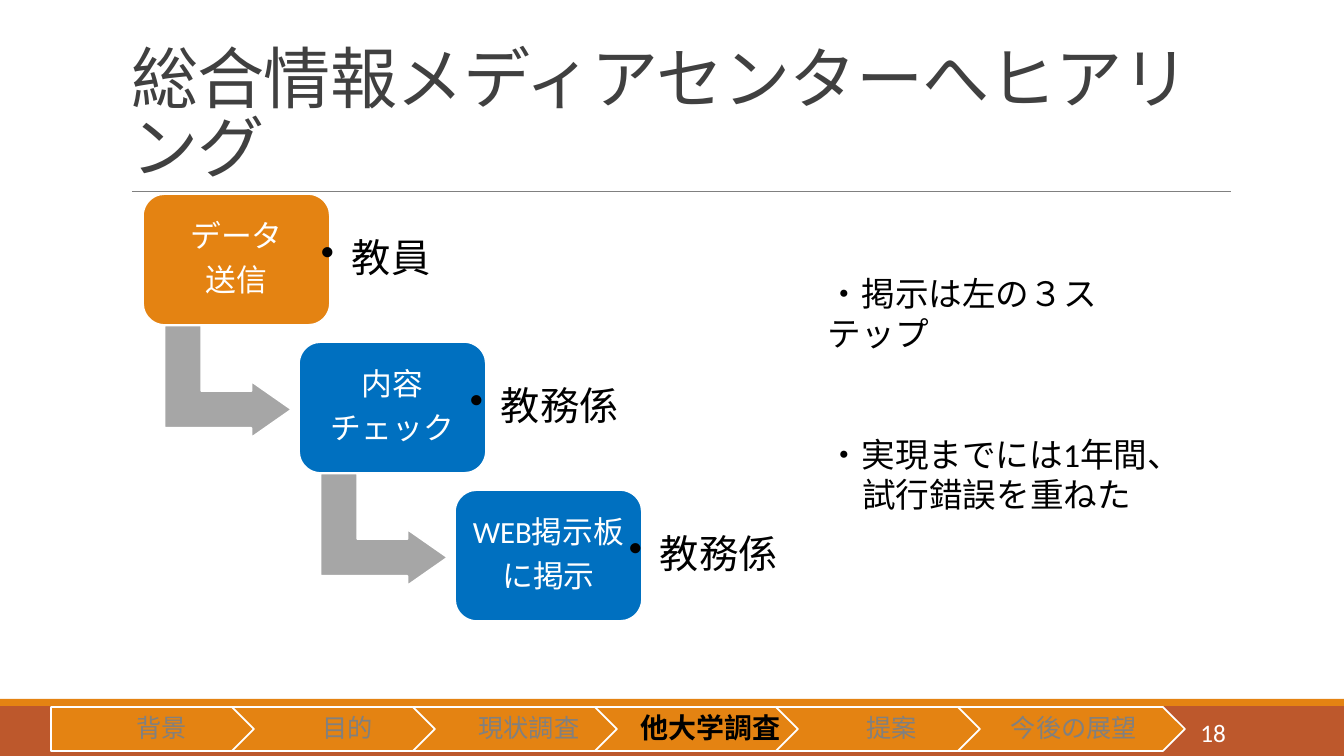
"""Build the slide on the hearing at the media centre."""
from lxml import etree
from pptx import Presentation
from pptx import util as u
from pptx.dml.color import RGBColor
from pptx.enum import shapes, text
from pptx.oxml.ns import qn

PX = 9071
THEME = {
    "font": "Calibri",
    "orange": "E48312", "rust": "BD582C", "blue": "0070C0", "arrow": "A6A6A6",
    "white": "FFFFFF", "black": "000000", "heading": "404040", "muted": "808080",
    "title": 48, "caption": 28, "body": 24, "step": 22, "active": 20, "nav": 18,
}
KIND = shapes.MSO_SHAPE
ALIGN = text.PP_ALIGN
MIDDLE = text.MSO_ANCHOR.MIDDLE

deck = Presentation()
deck.slide_width, deck.slide_height = 1344 * PX, 756 * PX
page = deck.slides.add_slide(deck.slide_layouts[1])


def draw(kind, geometry, fill, outlined=True):
    """Add a filled preset shape, with a white outline if asked."""
    shape = page.shapes.add_shape(kind, *[PX * value for value in geometry])
    shape.shadow.inherit = False
    shape.fill.solid()
    shape.fill.fore_color.rgb = RGBColor.from_string(THEME[fill])
    if outlined:
        shape.line.color.rgb = RGBColor.from_string(THEME["white"])
        shape.line.width = u.Pt(1.25)
    else:
        shape.line.fill.background()
    return shape


def write(frame, lines, size, color, margins, frame_format, para_format, bold=False):
    """Fill a text frame with one paragraph per line."""
    sides = ("margin_left", "margin_top", "margin_right", "margin_bottom")
    frame_format = {"word_wrap": True, "auto_size": text.MSO_AUTO_SIZE.NONE,
                    **dict(zip(sides, [PX * value for value in margins])), **frame_format}
    for name, value in frame_format.items():
        setattr(frame, name, value)
    for index, line in enumerate(lines):
        para = frame.add_paragraph() if index else frame.paragraphs[0]
        for name, value in para_format.items():
            setattr(para, name, value)
        span = para.add_run()
        span.text = line
        font_format = {"name": THEME["font"], "size": u.Pt(THEME[size]), "bold": bold}
        for name, value in font_format.items():
            setattr(span.font, name, value)
        span.font.color.rgb = RGBColor.from_string(THEME[color])


draw(KIND.RECTANGLE, (0, 706, 1344, 50), "rust", False)
draw(KIND.RECTANGLE, (0, 699, 1344, 7), "orange", False)

rule = page.shapes.add_connector(
    shapes.MSO_CONNECTOR.STRAIGHT, 132 * PX, 191 * PX, 1231 * PX, 191 * PX)
rule.line.color.rgb = RGBColor.from_string(THEME["muted"])
rule.line.width = u.Pt(0.5)
etree.SubElement(rule._element.spPr, qn("a:effectLst"))

title, body = page.placeholders
for box, geometry in ((title, (121, 31, 1109, 160)), (body, (818, 268, 346, 214))):
    for name, value in zip(("left", "top", "width", "height"), geometry):
        setattr(box, name, PX * value)

write(title.text_frame, ["総合情報メディアセンターへヒアリング"], "title", "heading",
      (10, 5, 10, 5), {"vertical_anchor": text.MSO_ANCHOR.BOTTOM},
      {"alignment": ALIGN.LEFT, "line_spacing": 0.85})
title.text_frame.paragraphs[0].runs[0]._r.get_or_add_rPr().set("spc", "-50")

number = page.shapes.add_textbox(*[PX * value for value in (1092, 712, 144, 40)])
write(number.text_frame, ["18"], "nav", "white", (10, 5, 10, 5),
      {"vertical_anchor": MIDDLE}, {"alignment": ALIGN.RIGHT})

centred = {"alignment": ALIGN.CENTER, "line_spacing": 0.9}
sections = ["背景", "目的", "現状調査", "他大学調査", "提案", "今後の展望"]
for index, section in enumerate(sections):
    active = section == "他大学調査"
    kind = KIND.CHEVRON if index else KIND.PENTAGON
    tab = draw(kind, (51 + index * 907 // 5, 707, 227, 44), "orange")
    write(tab.text_frame, [section], "active" if active else "nav",
          "black" if active else "muted", (8, 5, 3, 5), {"vertical_anchor": MIDDLE},
          {**centred, "space_after": u.Pt(6)}, active)

steps = [
    (["データ", "送信"], "orange", "教員", 309, 137),
    (["内容", "チェック"], "blue", "教務係", 458, 194),
    (["WEB掲示板", "に掲示"], "blue", "教務係", 617, 187),
]
for index, (lines, fill, owner, owner_left, owner_width) in enumerate(steps):
    left, top = 143 + 156 * index, 194 + 148 * index
    if index < len(steps) - 1:
        arrow = draw(KIND.BENT_UP_ARROW, (left + 29, top + 124, 112, 127), "arrow")
        arrow.rotation = 90
        for place, value in enumerate((0.328, 0.25, 0.358)):
            arrow.adjustments[place] = value
    step = draw(KIND.ROUNDED_RECTANGLE, (left, top, 187, 131), fill)
    write(step.text_frame, lines, "step", "white", (9, 9, 9, 9),
          {"vertical_anchor": MIDDLE}, {**centred, "space_after": u.Pt(8)})
    geometry = (owner_left, top + 13, owner_width, 106)
    caption = page.shapes.add_textbox(*[PX * value for value in geometry])
    write(caption.text_frame, [owner], "caption", "black", (12, 12, 12, 12),
          {"vertical_anchor": MIDDLE}, {"line_spacing": 0.9, "space_after": u.Pt(4)})
    properties = caption.text_frame.paragraphs[0]._p.get_or_add_pPr()
    properties.set("marL", str(31 * PX))
    properties.set("indent", str(-31 * PX))
    etree.SubElement(properties, qn("a:buChar"), char="•")

findings = ["・掲示は左の３ステップ", "・実現までには1年間、", "試行錯誤を重ねた"]
write(body.text_frame, findings, "body", "black", (10, 5, 10, 5),
      {"vertical_anchor": text.MSO_ANCHOR.TOP}, {"space_before": u.Pt(0)})
for para, gap, indent in zip(body.text_frame.paragraphs, (0, 57, 0), (0, 0, 34)):
    para.space_before = u.Pt(gap)
    properties = para._p.get_or_add_pPr()
    properties.set("marL", str(indent * PX))
    properties.set("indent", "0")
    etree.SubElement(properties, qn("a:buNone"))

deck.save("out.pptx")
